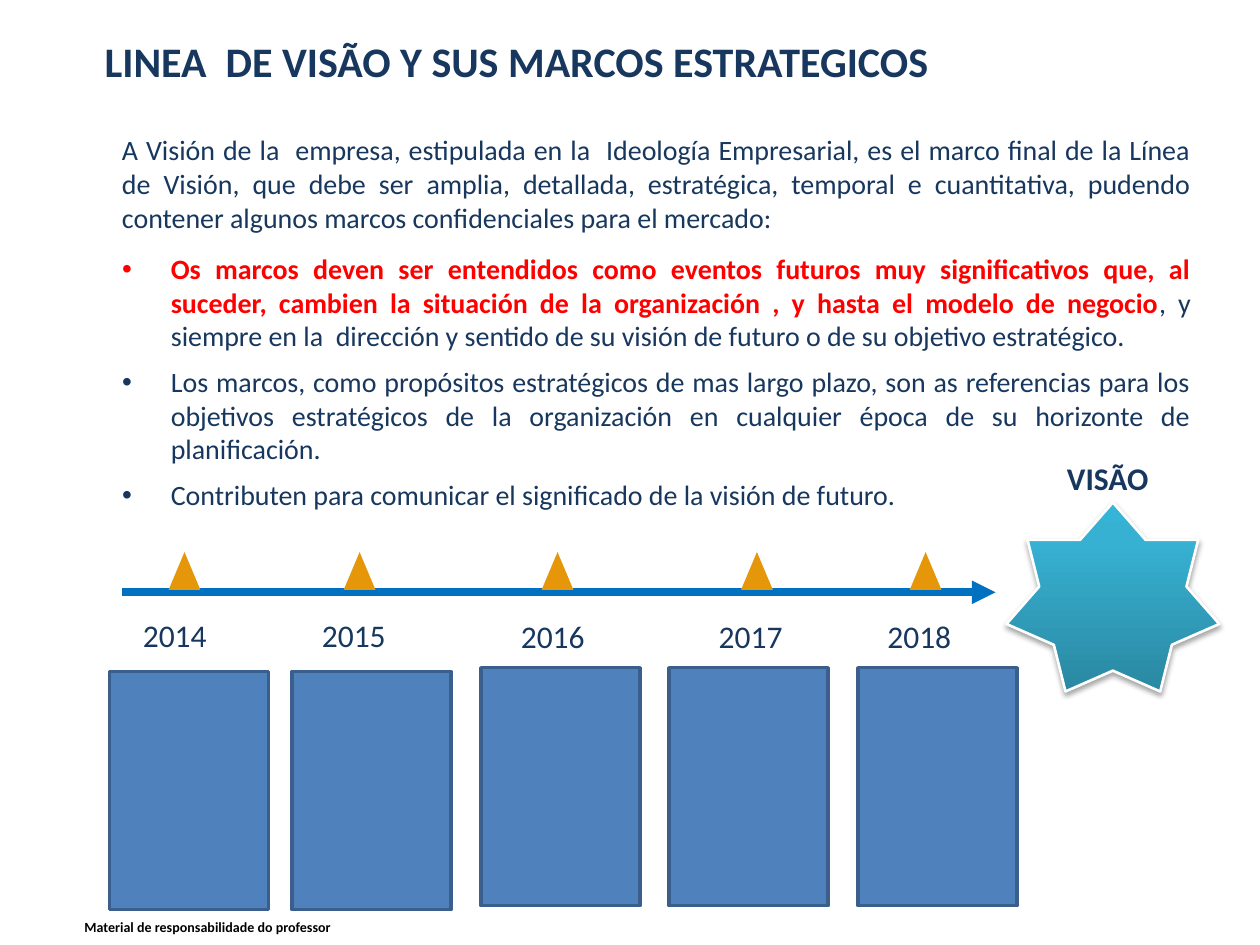
from copy import deepcopy
from dataclasses import dataclass

from pptx import Presentation
from pptx.dml.color import RGBColor
from pptx.enum.shapes import MSO_CONNECTOR as Connector, MSO_SHAPE as Preset
from pptx.enum.text import MSO_ANCHOR as Anchor, MSO_AUTO_SIZE as AutoSize, PP_ALIGN as Align
from pptx.oxml import parse_xml
from pptx.oxml.ns import nsdecls, qn
from pptx.util import Cm, Pt

NAVY = "17375E"
RED = "FF0000"
ORANGE = "E59609"
BLUE = "4F81BD"


@dataclass
class Area:
    left: float
    top: float
    width: float
    height: float

    def lengths(self) -> list:
        return [Cm(value) for value in (self.left, self.top, self.width, self.height)]


@dataclass
class Milestone:
    year: str
    marker_left: float
    label_left: float
    label_top: float
    panel_left: float
    panel_top: float


MILESTONES = [
    Milestone("2014", 3.4, 2.63, 12.29, 2.21, 13.54),
    Milestone("2015", 6.93, 6.24, 12.29, 5.89, 13.54),
    Milestone("2016", 10.92, 10.25, 12.32, 9.7, 13.46),
    Milestone("2017", 14.94, 14.24, 12.32, 13.49, 13.46),
    Milestone("2018", 18.34, 17.64, 12.32, 17.3, 13.46),
]

INTRO = (
    "A Visión de la  empresa, estipulada en la  Ideología Empresarial, es el marco final "
    "de la Línea de Visión, que debe ser amplia, detallada, estratégica, temporal e "
    "cuantitativa, pudendo contener algunos marcos confidenciales para el mercado:"
)
KEY_POINT = (
    "Os marcos deven ser entendidos como eventos futuros muy significativos que, al suceder, "
    "cambien la situación de la organización , y hasta el modelo de negocio"
)
BULLETS = [
    [
        (KEY_POINT, RED, True),
        (", y siempre en la  dirección y sentido de su visión de futuro o de su objetivo "
         "estratégico.", NAVY, False),
    ],
    [("Los marcos, como propósitos estratégicos de mas largo plazo, son as referencias para "
      "los objetivos estratégicos de la organización en cualquier época de su horizonte de "
      "planificación.", NAVY, False)],
    [("Contributen para comunicar el significado de la visión de futuro.", NAVY, False)],
]


def paint(target, color: str) -> None:
    target.solid()
    target.fore_color.rgb = RGBColor.from_string(color)


def add_span(para, text: str, *, size: float, color: str = NAVY, bold: bool = False) -> None:
    span = para.add_run()
    span.text = text
    span.font.name = "Calibri"
    span.font.size = Pt(size)
    span.font.bold = bold
    paint(span.font.fill, color)


def place(shape, area: Area) -> None:
    shape.left, shape.top, shape.width, shape.height = area.lengths()


def add_label(page, area: Area, text: str, *, wrap: bool = True, align=Align.LEFT,
              anchor=Anchor.TOP, **style) -> None:
    box = page.shapes.add_textbox(*area.lengths())
    box.text_frame.word_wrap = wrap
    box.text_frame.vertical_anchor = anchor
    para = box.text_frame.paragraphs[0]
    para.alignment = align
    add_span(para, text, **style)


def add_preset(page, preset, area: Area, *, fill: str = "", line: str = "", weight: float = 0):
    shape = page.shapes.add_shape(preset, *area.lengths())
    shape.shadow.inherit = False
    if fill:
        paint(shape.fill, fill)
    if line:
        paint(shape.line.fill, line)
        shape.line.width = Pt(weight)
    else:
        shape.line.fill.background()
    return shape


def fill_title(page) -> None:
    title = page.shapes.title
    place(title, Area(2.11, 0.64, 20.6, 1.17))
    frame = title.text_frame
    frame.margin_left = frame.margin_right = frame.margin_top = frame.margin_bottom = 0
    frame.vertical_anchor = Anchor.MIDDLE
    frame.auto_size = AutoSize.NONE
    para = frame.paragraphs[0]
    para.alignment = Align.LEFT
    add_span(para, "LINEA  DE VISÃO Y SUS MARCOS ESTRATEGICOS", size=24, bold=True)


def fill_body(page) -> None:
    body = page.placeholders[1]
    place(body, Area(2.21, 4.95, 22.05, 5.54))
    frame = body.text_frame
    frame.auto_size = AutoSize.NONE
    for index, spans in enumerate(BULLETS):
        para = frame.add_paragraph() if index else frame.paragraphs[0]
        para.alignment = Align.JUSTIFY
        para.space_before = Pt(7 if index else 0)
        properties = para._p.get_or_add_pPr()
        properties.set("marL", str(Cm(0.98)))
        properties.set("indent", str(Cm(-0.98)))
        for text, color, bold in spans:
            add_span(para, text, size=16, color=color, bold=bold)


def add_timeline(page) -> None:
    arrow = page.shapes.add_connector(Connector.STRAIGHT, Cm(2.46), Cm(11.94), Cm(20.07), Cm(11.94))
    paint(arrow.line.fill, "0070C0")
    arrow.line.width = Pt(4.5)
    arrow.line._get_or_add_ln().append(parse_xml(f'<a:tailEnd {nsdecls("a")} type="triangle"/>'))
    arrow._element.spPr.append(parse_xml(f'<a:effectLst {nsdecls("a")}/>'))
    for milestone in MILESTONES:
        add_preset(page, Preset.ISOSCELES_TRIANGLE,
                   Area(milestone.marker_left, 11.13, 0.64, 0.76), fill=ORANGE)
        add_label(page, Area(milestone.label_left, milestone.label_top, 2.54, 1.02),
                  milestone.year, size=18)
        add_preset(page, Preset.RECTANGLE,
                   Area(milestone.panel_left, milestone.panel_top, 3.2, 4.8),
                   fill=BLUE, line="3A5F8C", weight=2)


def add_vision_star(page) -> None:
    star = add_preset(page, Preset.STAR_7_POINT, Area(20.29, 10.13, 4.29, 3.81),
                      line="FFFFFF", weight=1.5)
    star.fill.gradient()
    star.fill.gradient_angle = 90
    properties = star._element.spPr
    stops = properties.find(f'{qn("a:gradFill")}/{qn("a:gsLst")}')
    stops.append(deepcopy(stops[0]))
    shades = [(0, "2A88A2"), (0.8, "37B1D2"), (1, "34B4D6")]
    for stop, (position, color) in zip(star.fill.gradient_stops, shades):
        stop.position = position
        stop.color.rgb = RGBColor.from_string(color)
    properties.find(qn("a:effectLst")).append(parse_xml(
        f'<a:outerShdw {nsdecls("a")} blurRad="{Pt(3.1)}" dist="{Pt(1.8)}" dir="5400000" '
        'rotWithShape="0"><a:srgbClr val="000000"><a:alpha val="35000"/></a:srgbClr>'
        '</a:outerShdw>'))


def main() -> None:
    deck = Presentation()
    deck.slide_width, deck.slide_height = Cm(25.4), Cm(19.05)
    page = deck.slides.add_slide(deck.slide_layouts[1])
    fill_title(page)
    fill_body(page)
    add_label(page, Area(2.21, 2.54, 22.05, 2.31), INTRO, size=16,
              align=Align.JUSTIFY, anchor=Anchor.MIDDLE)
    add_timeline(page)
    add_vision_star(page)
    add_label(page, Area(21.26, 9.12, 2.16, 1.02), "VISÃO", wrap=False, size=18, bold=True)
    add_label(page, Area(1.45, 18.39, 14.4, 0.58), "Material de responsabilidade do professor",
              size=8, color="000000", bold=True)
    deck.save("out.pptx")


if __name__ == "__main__":
    main()
